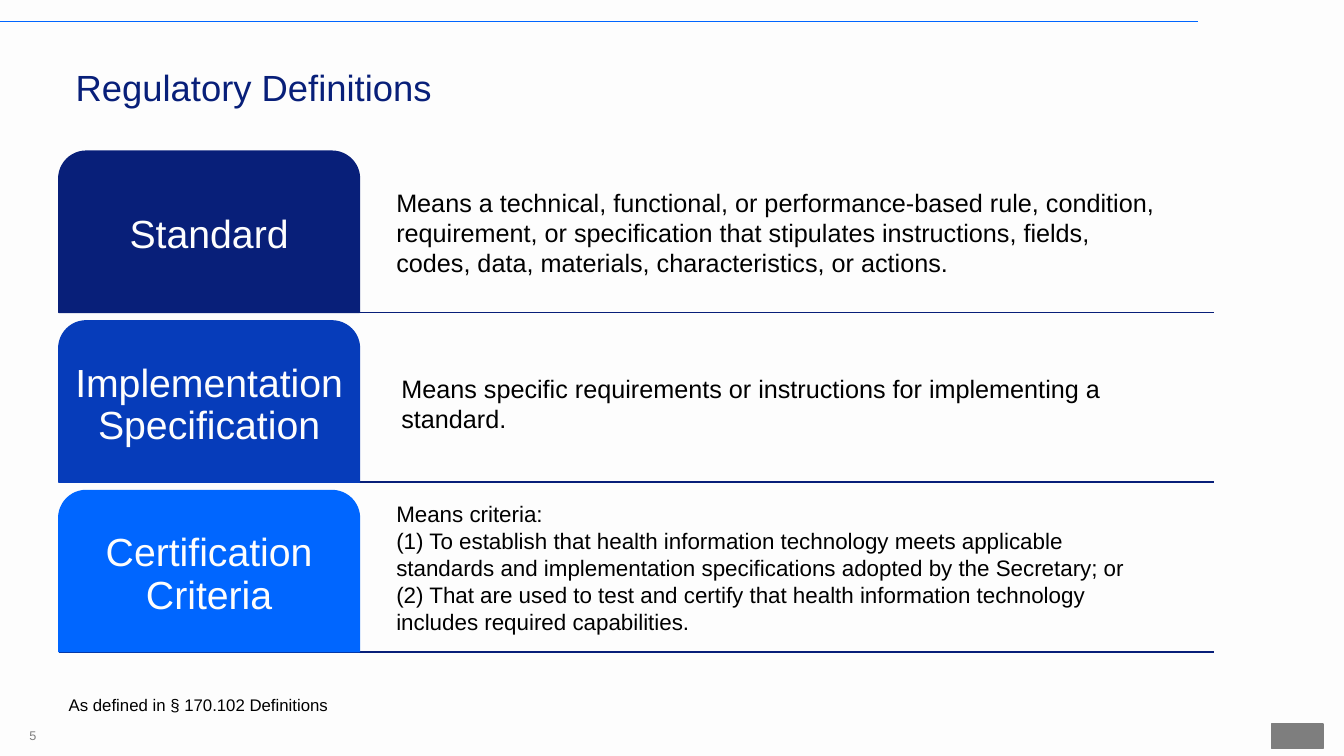
import pptx
import pptx.util
import pptx.dml.color
import pptx.enum.shapes
import pptx.enum.text
import pptx.oxml.ns

RGB = pptx.dml.color.RGBColor
SHAPE = pptx.enum.shapes.MSO_SHAPE
ALIGN = pptx.enum.text.PP_ALIGN
ANCHOR = pptx.enum.text.MSO_ANCHOR

PAPER = RGB(0xFD, 0xFD, 0xFD)
BLACK = RGB(0x00, 0x00, 0x00)
GREY = RGB(0x7E, 0x7E, 0x7E)
NAVY = RGB(0x08, 0x1F, 0x79)
ROYAL = RGB(0x06, 0x3C, 0xBA)
AZURE = RGB(0x00, 0x66, 0xFF)

LEFT = 7
RIGHT = 144.5
TOP = 18
PITCH = 20.2
TAB_W = 35.8
TAB_H = 19.2

TERMS = [
    ("Standard", NAVY, (46, 21.7, 93, 12.1), 18,
     ["Means a technical, functional, or performance-based rule, condition, "
      "requirement, or specification that stipulates instructions, fields, "
      "codes, data, materials, characteristics, or actions."]),
    ("Implementation Specification", ROYAL, (46.6, 43.8, 92.9, 8.5), 18,
     ["Means specific requirements or instructions for implementing a standard."]),
    ("Certification Criteria", AZURE, (46, 59, 91.3, 21.8), 16,
     ["Means criteria:",
      "(1) To establish that health information technology meets applicable "
      "standards and implementation specifications adopted by the Secretary; or",
      "(2) That are used to test and certify that health information technology "
      "includes required capabilities."]),
]


class Sheet:
    font = "Arial"
    cols = 160
    rows = 90

    def __init__(self, deck):
        self.wide = deck.slide_width
        self.high = deck.slide_height
        self.slide = deck.slides.add_slide(deck.slide_layouts[6])
        self.slide.background.fill.solid()
        self.slide.background.fill.fore_color.rgb = PAPER

    def x(self, col):
        return round(self.wide * col / self.cols)

    def y(self, row):
        return round(self.high * row / self.rows)

    def area(self, box):
        col, row, wide, high = box
        return self.x(col), self.y(row), self.x(wide), self.y(high)

    def fill(self, frame, lines, size, color, align=ALIGN.LEFT, pad=None, lead=None):
        frame.word_wrap = True
        if pad is not None:
            frame.margin_left = frame.margin_right = pptx.util.Inches(pad)
            frame.margin_top = frame.margin_bottom = pptx.util.Inches(pad)
        for i, line in enumerate(lines):
            para = frame.add_paragraph() if i else frame.paragraphs[0]
            para.alignment = align
            if lead:
                para.line_spacing = lead
            run = para.add_run()
            run.text = line
            run.font.name = self.font
            run.font.size = pptx.util.Pt(size)
            run.font.color.rgb = color

    def text(self, box, lines, size, color, anchor=ANCHOR.TOP, **style):
        frame = self.slide.shapes.add_textbox(*self.area(box)).text_frame
        frame.vertical_anchor = anchor
        self.fill(frame, lines, size, color, **style)

    def rule(self, start, end, row, color, width):
        line = self.slide.shapes.add_connector(
            pptx.enum.shapes.MSO_CONNECTOR.STRAIGHT,
            self.x(start), self.y(row), self.x(end), self.y(row))
        line.line.color.rgb = color
        line.line.width = pptx.util.Pt(width)
        props = line._element.spPr
        props.append(props.makeelement(pptx.oxml.ns.qn("a:effectLst"), {}))

    def block(self, kind, box, color):
        shape = self.slide.shapes.add_shape(kind, *self.area(box))
        shape.shadow.inherit = False
        shape.fill.solid()
        shape.fill.fore_color.rgb = color
        shape.line.color.rgb = color
        shape.line.width = pptx.util.Pt(1)
        return shape

    def tab(self, box, label, color):
        shape = self.block(SHAPE.ROUND_2_SAME_RECTANGLE, box, color)
        shape.adjustments[0] = 0.17
        shape.adjustments[1] = 0
        shape.text_frame.vertical_anchor = ANCHOR.MIDDLE
        self.fill(shape.text_frame, [label], 28, PAPER,
                  align=ALIGN.CENTER, pad=0.06, lead=0.9)


def main():
    deck = pptx.Presentation()
    deck.slide_width = pptx.util.Inches(13.33)
    deck.slide_height = pptx.util.Inches(7.5)
    sheet = Sheet(deck)

    sheet.rule(0, 142.6, 2.6, AZURE, 0.75)
    sheet.block(SHAPE.RECTANGLE, (151.4, 86.2, 6.1, 2.9), GREY)
    sheet.text((0, 85.2, 5.5, 4.8), ["5"], 9, GREY,
               anchor=ANCHOR.MIDDLE, align=ALIGN.RIGHT)
    sheet.text((8.4, 7.8, 143, 10.9), ["Regulatory Definitions"], 26, NAVY,
               pad=0.05, lead=0.9)

    for i, (term, color, box, size, lines) in enumerate(TERMS):
        row = TOP + i * PITCH
        sheet.rule(LEFT, RIGHT, row + TAB_H, NAVY, 1)
        sheet.tab((LEFT, row, TAB_W, TAB_H), term, color)
        sheet.text(box, lines, size, BLACK)

    sheet.text((LEFT, 82.1, 117.1, 3.6), ["As defined in § 170.102 Definitions"],
               12, BLACK)
    deck.save("out.pptx")


if __name__ == "__main__":
    main()
